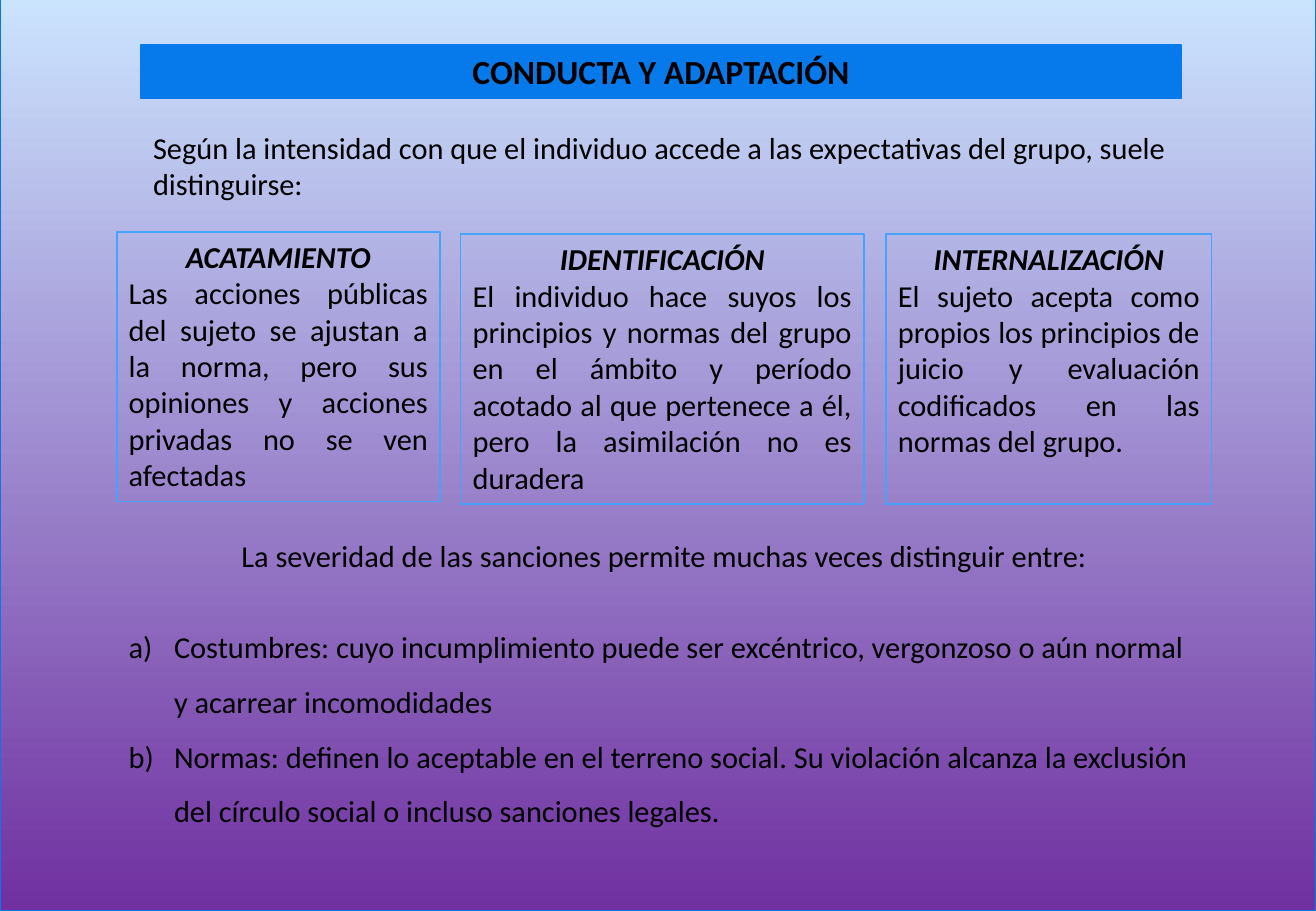
from dataclasses import dataclass
from typing import Optional

import pptx
import pptx.dml.color
import pptx.enum.shapes
import pptx.enum.text
import pptx.oxml.xmlchemy
import pptx.util
from lxml import etree
from pptx.dml.color import RGBColor
from pptx.util import Cm, Pt

ALIGN = pptx.enum.text.PP_ALIGN
ANCHOR = pptx.enum.text.MSO_ANCHOR
RECTANGLE = pptx.enum.shapes.MSO_SHAPE.RECTANGLE

BLACK = RGBColor(0x00, 0x00, 0x00)
SKY = RGBColor(0xCB, 0xE4, 0xFE)
PURPLE = RGBColor(0x70, 0x30, 0xA0)
EDGE_BLUE = RGBColor(0x06, 0x78, 0xEB)
TITLE_BLUE = RGBColor(0x06, 0x79, 0xEB)
BOX_BLUE = RGBColor(0x48, 0xA1, 0xFA)
FONT = "Calibri"
HANGING = Cm(0.95)


@dataclass(frozen=True)
class Box:
    left: float
    top: float
    width: float
    height: float


@dataclass(frozen=True)
class Level:
    """A degree of adaptation to the group, with its frame."""
    box: Box
    name: str
    text: str


LEVELS = (
    Level(Box(2.44, 4.85, 6.76, 5.64), "ACATAMIENTO",
          "Las acciones públicas del sujeto se ajustan a la norma, pero sus "
          "opiniones y acciones privadas no se ven afectadas"),
    Level(Box(9.63, 4.9, 8.43, 5.64), "IDENTIFICACIÓN",
          "El individuo hace suyos los principios y normas del grupo en el "
          "ámbito y período acotado al que pertenece a él, pero la asimilación "
          "no es duradera"),
    Level(Box(18.52, 4.9, 6.81, 5.64), "INTERNALIZACIÓN",
          "El sujeto acepta como propios los principios de juicio y evaluación "
          "codificados en las normas del grupo."),
)

SANCTIONS = (
    "Costumbres: cuyo incumplimiento puede ser excéntrico, vergonzoso o aún "
    "normal y acarrear incomodidades",
    "Normas: definen lo aceptable en el terreno social. Su violación alcanza "
    "la exclusión del círculo social o incluso sanciones legales.",
)


def add_rectangle(slide, box: Box, line: RGBColor, weight: float,
                  fill: Optional[RGBColor] = None):
    sp = slide.shapes.add_shape(RECTANGLE, Cm(box.left), Cm(box.top),
                                Cm(box.width), Cm(box.height))
    sp.shadow.inherit = False
    sp.line.color.rgb = line
    sp.line.width = Pt(weight)
    if fill is None:
        sp.fill.background()
    else:
        sp.fill.solid()
        sp.fill.fore_color.rgb = fill
    sp.text_frame.word_wrap = True
    sp.text_frame.vertical_anchor = ANCHOR.TOP
    return sp


def add_text_box(slide, box: Box):
    sp = slide.shapes.add_textbox(Cm(box.left), Cm(box.top),
                                  Cm(box.width), Cm(box.height))
    sp.text_frame.word_wrap = True
    return sp


def write(p, text: str, align: ALIGN = ALIGN.LEFT, size: float = 18,
          bold: bool = False, italic: bool = False) -> None:
    p.text = text
    p.alignment = align
    p.font.name = FONT
    p.font.size = Pt(size)
    p.font.bold = bold
    p.font.italic = italic
    p.font.color.rgb = BLACK


def letter(p) -> None:
    """Number the paragraph a), b), ... with a hanging indent."""
    pPr = p._p.get_or_add_pPr()
    pPr.set("marL", str(HANGING))
    pPr.set("indent", str(-HANGING))
    bullet = etree.Element(pptx.oxml.ns.qn("a:buAutoNum"), type="alphaLcParenR")
    pPr.find(pptx.oxml.ns.qn("a:defRPr")).addprevious(bullet)


def add_backdrop(slide) -> None:
    sp = add_rectangle(slide, Box(0, -0.08, 27.51, 19.13), EDGE_BLUE, 0.5)
    sp.fill.gradient()
    sp.fill.gradient_angle = 270
    for stop, color in zip(sp.fill.gradient_stops, (SKY, PURPLE)):
        stop.color.rgb = color


def add_level(slide, level: Level) -> None:
    tf = add_rectangle(slide, level.box, BOX_BLUE, 1).text_frame
    write(tf.paragraphs[0], level.name, ALIGN.CENTER, bold=True, italic=True)
    write(tf.add_paragraph(), level.text, ALIGN.JUSTIFY)


def add_sanctions(slide) -> None:
    tf = add_text_box(slide, Box(2.44, 11.1, 22.89, 6.4)).text_frame
    heading = tf.paragraphs[0]
    write(heading, "La severidad de las sanciones permite muchas veces "
                   "distinguir entre:", ALIGN.CENTER)
    heading.space_after = Pt(22)
    for text in SANCTIONS:
        p = tf.add_paragraph()
        write(p, text)
        p.line_spacing = 1.5
        letter(p)


def main() -> None:
    prs = pptx.Presentation()
    prs.slide_width, prs.slide_height = Cm(27.51), Cm(19.05)
    slide = prs.slides.add_slide(prs.slide_layouts[6])
    slide.background.fill.solid()
    slide.background.fill.fore_color.rgb = BLACK

    add_backdrop(slide)
    title = add_rectangle(slide, Box(2.95, 0.94, 21.74, 1.12),
                          TITLE_BLUE, 0.75, TITLE_BLUE)
    write(title.text_frame.paragraphs[0], "CONDUCTA Y ADAPTACIÓN",
          ALIGN.CENTER, size=20, bold=True)
    intro = add_text_box(slide, Box(2.95, 2.57, 21.74, 1.8))
    write(intro.text_frame.paragraphs[0],
          "Según la intensidad con que el individuo accede a las expectativas "
          "del grupo, suele distinguirse:")
    for level in LEVELS:
        add_level(slide, level)
    add_sanctions(slide)
    prs.save("out.pptx")


if __name__ == "__main__":
    main()
